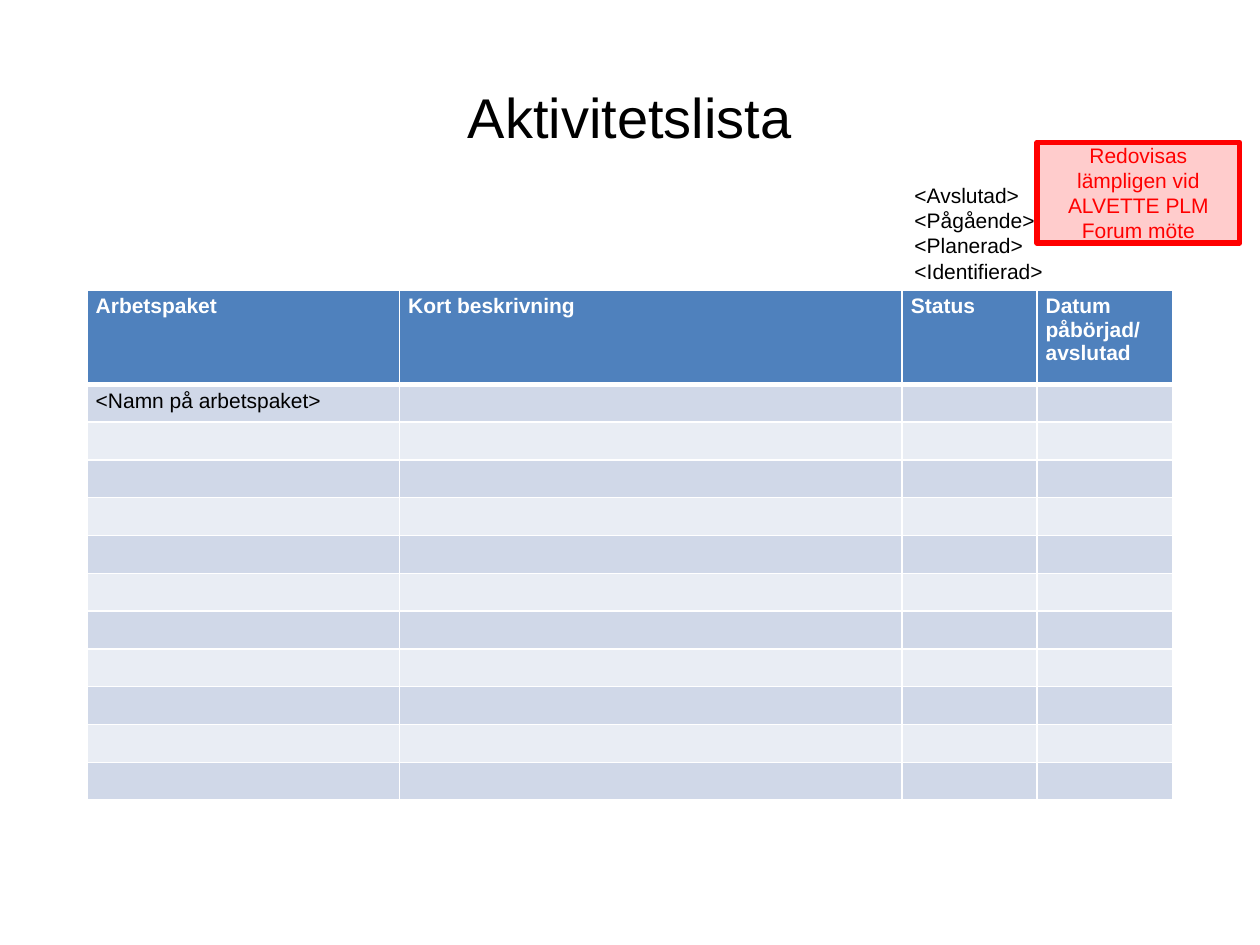
from lxml.etree import SubElement
from pptx import Presentation
from pptx.dml.color import RGBColor
from pptx.enum.shapes import MSO_SHAPE
from pptx.enum.text import MSO_ANCHOR, PP_ALIGN
from pptx.oxml.ns import qn
from pptx.util import Inches, Pt


def paint(target, hex_color):
    target.solid()
    target.fore_color.rgb = RGBColor.from_string(hex_color)


def write(frame, text, size=12, color="000000", bold=False, align=PP_ALIGN.LEFT,
          anchor=MSO_ANCHOR.TOP, wrap=True):
    frame.text = text
    frame.word_wrap = wrap
    frame.vertical_anchor = anchor
    for paragraph in frame.paragraphs:
        paragraph.alignment = align
        for run in paragraph.runs:
            run.font.size = Pt(size)
            run.font.name = "Arial"
            run.font.bold = bold
            paint(run.font.fill, color)
        if not paragraph.runs:
            SubElement(paragraph._p, qn("a:endParaRPr"), sz=str(size * 100))


deck = Presentation()
deck.slide_width, deck.slide_height = Inches(10), Inches(7.5)
slide = deck.slides.add_slide(deck.slide_layouts[5])

heading = slide.shapes.title
heading.left, heading.top = Inches(0.5), Inches(0.3)
heading.width, heading.height = Inches(9), Inches(1.25)
write(heading.text_frame, "Aktivitetslista", size=32,
      align=PP_ALIGN.CENTER, anchor=MSO_ANCHOR.MIDDLE)

headers = ["Arbetspaket", "Kort beskrivning", "Status", "Datum påbörjad/\navslutad"]
column_widths = [2.48, 3.99, 1.07, 1.08]
row_heights = [0.75] + [0.3] * 11
activities = slide.shapes.add_table(
    len(row_heights), len(headers), Inches(0.69), Inches(2.3),
    Inches(sum(column_widths)), Inches(sum(row_heights))).table
for column, width in zip(activities.columns, column_widths):
    column.width = Inches(width)

for row_number, height in enumerate(row_heights):
    is_header = row_number == 0
    activities.rows[row_number].height = Inches(height)
    band = "4F81BD" if is_header else ("E9EDF4", "D0D8E8")[row_number % 2]
    for column_number, header in enumerate(headers):
        cell = activities.cell(row_number, column_number)
        cell.margin_left = cell.margin_right = Inches(0.07)
        cell.margin_top = cell.margin_bottom = Inches(0.04)
        first_entry = row_number == 1 and column_number == 0
        entry = "<Namn på arbetspaket>" if first_entry else ""
        write(cell.text_frame, header if is_header else entry,
              color="FFFFFF" if is_header else "000000", bold=is_header)
        for side in "LRTB":
            thick = (is_header and side == "B") or (row_number == 1 and side == "T")
            border = SubElement(cell._tc.get_or_add_tcPr(), qn(f"a:ln{side}"),
                                w=str(Pt(3 if thick else 1)))
            SubElement(SubElement(border, qn("a:solidFill")), qn("a:srgbClr"), val="FFFFFF")
        paint(cell.fill, band)

statuses = slide.shapes.add_textbox(Inches(7.16), Inches(1.4), Inches(1.23), Inches(0.91))
write(statuses.text_frame, "<Avslutad>\n<Pågående>\n<Planerad>\n<Identifierad>", wrap=False)

reminder = slide.shapes.add_shape(
    MSO_SHAPE.RECTANGLE, Inches(8.23), Inches(1.13), Inches(1.61), Inches(0.8))
reminder.shadow.inherit = False
paint(reminder.fill, "FFCCCC")
paint(reminder.line.fill, "FF0000")
reminder.line.width = Pt(3)
write(reminder.text_frame, "Redovisas lämpligen vid ALVETTE PLM Forum möte",
      color="FF0000", align=PP_ALIGN.CENTER, anchor=MSO_ANCHOR.MIDDLE)

deck.save("out.pptx")
